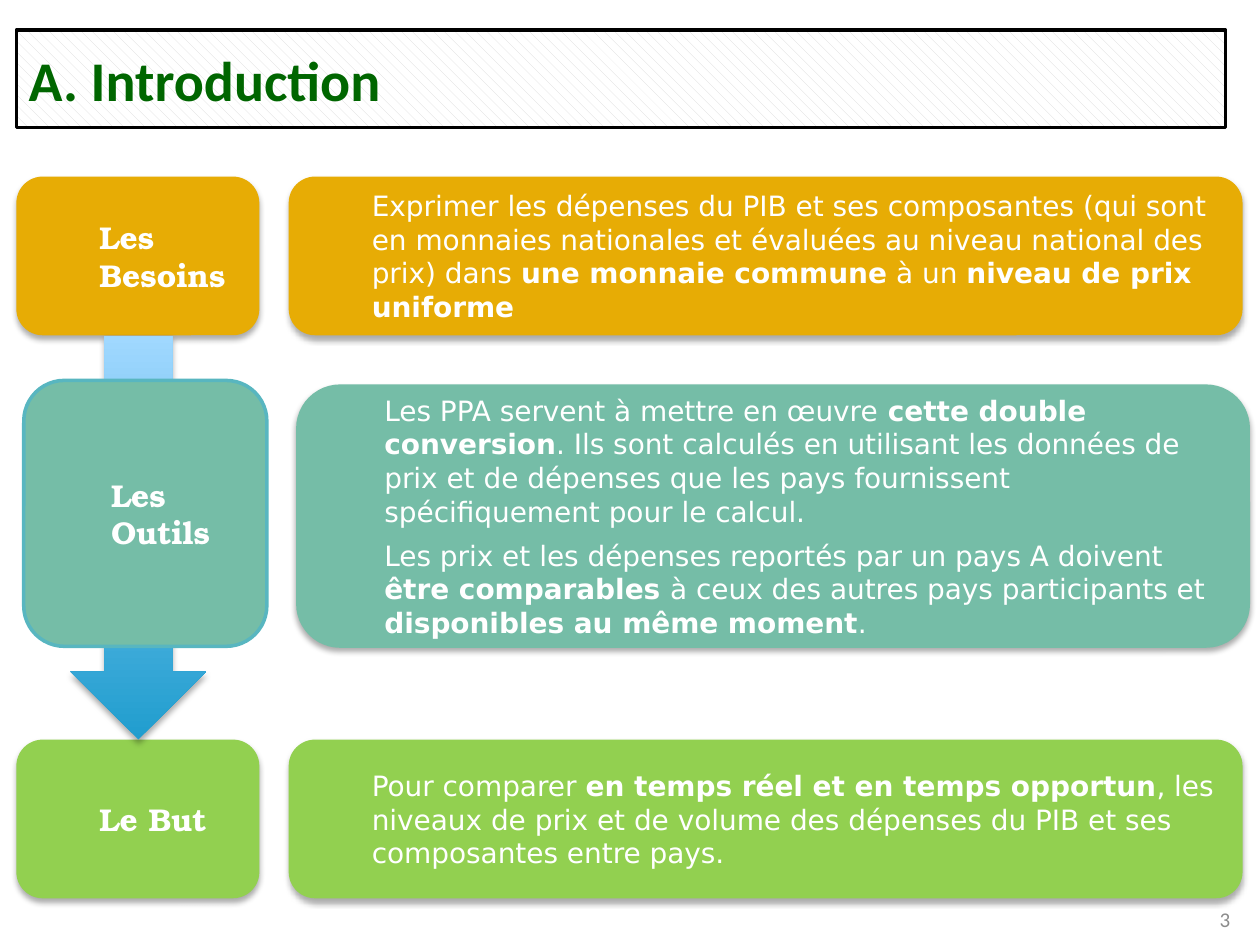
"""Build the introduction slide on needs, tools and goal."""
from dataclasses import dataclass

import pptx
import pptx.dml.color
import pptx.dml.fill
import pptx.enum.dml
import pptx.enum.shapes
import pptx.enum.text
import pptx.oxml
import pptx.oxml.ns
import pptx.util

Cm = pptx.util.Cm
Pt = pptx.util.Pt
Kind = pptx.enum.shapes.MSO_SHAPE
Align = pptx.enum.text.PP_ALIGN
COLORS = {
    "gold": "E7AC05", "lime": "92D050", "teal": "75BDA7", "rim": "58B6C0",
    "deep": "209DCE", "pale": "A0D8FF", "white": "FFFFFF", "black": "000000",
    "green": "006600", "gray": "8C8C8C", "hatch": "D9D9D9",
}
SHADOW = (
    f'<a:effectLst {pptx.oxml.ns.nsdecls("a")}>'
    f'<a:outerShdw blurRad="{Pt(3.5)}" dist="{Pt(2.2)}" dir="5400000" '
    'algn="ctr" rotWithShape="0"><a:srgbClr val="000000">'
    '<a:alpha val="32000"/></a:srgbClr></a:outerShdw></a:effectLst>'
)


@dataclass
class Box:
    """Place of a shape in centimetres."""
    left: float
    top: float
    width: float
    height: float

    def spot(self) -> tuple:
        """Return the place as lengths."""
        return Cm(self.left), Cm(self.top), Cm(self.width), Cm(self.height)


@dataclass
class Font:
    """Look of a text."""
    name: str
    size: int
    color: str


@dataclass
class Run:
    """Piece of text, bold or not."""
    text: str
    bold: bool = False


@dataclass
class Row:
    """Label card and the body card beside it."""
    color: str
    label: Box
    body: Box
    name: str
    paras: list[list[Run]]
    rim: str = ""


HEAD = Font("Calibri", 32, "green")
LABEL = Font("TeX Gyre Bonum", 18, "white")
BODY = Font("DejaVu Sans", 16, "white")
FOOT = Font("Calibri", 12, "gray")

NEEDS = Row("gold", Box(0.33, 3.56, 4.9, 3.2), Box(5.82, 3.56, 19.23, 3.2), "Les Besoins", [[
    Run("Exprimer les dépenses du PIB et ses composantes (qui sont en monnaies "
        "nationales et évaluées au niveau national des prix) dans "),
    Run("une monnaie commune", True),
    Run(" à un "),
    Run("niveau de prix uniforme", True),
]])
TOOLS = Row("teal", Box(0.48, 7.67, 4.9, 5.36), Box(5.97, 7.75, 19.23, 5.31), "Les Outils", [[
    Run("Les PPA servent à mettre en œuvre"),
    Run(" cette double conversion", True),
    Run(". Ils sont calculés en utilisant les données de prix et de dépenses "
        "que les pays fournissent spécifiquement pour le calcul."),
], [
    Run("Les prix et les dépenses reportés par un pays A doivent "),
    Run("être comparables ", True),
    Run("à ceux des autres pays participants et "),
    Run("disponibles au même moment", True),
    Run("."),
]], "rim")
GOAL = Row("lime", Box(0.33, 14.91, 4.9, 3.2), Box(5.82, 14.91, 19.23, 3.2), "Le But", [[
    Run("Pour comparer "),
    Run("en temps réel et en temps opportun", True),
    Run(", les niveaux de prix et de volume des dépenses du PIB et ses "
        "composantes entre pays."),
]])


def tint(key: str) -> pptx.dml.color.RGBColor:
    """Return a named colour."""
    return pptx.dml.color.RGBColor.from_string(COLORS[key])


def write(shape, paras: list[list[Run]], font: Font, align=Align.LEFT, inset: bool = False) -> None:
    """Write paragraphs run by run, centred in height."""
    frame = shape.text_frame
    frame.word_wrap = True
    frame.vertical_anchor = pptx.enum.text.MSO_ANCHOR.MIDDLE
    for i, runs in enumerate(paras):
        para = frame.add_paragraph() if i else frame.paragraphs[0]
        para.alignment = align
        if inset:
            para.level = 1
            para.space_after = Pt(6)
            props = para._p.get_or_add_pPr()
            props.set("marL", str(Cm(1.27)))
            props.set("indent", "0")
        for item in runs:
            run = para.add_run()
            run.text = item.text
            run.font.name = font.name
            run.font.size = Pt(font.size)
            run.font.bold = item.bold
            run.font.color.rgb = tint(font.color)


def draw(slide, kind, box: Box, rim: str = "", shade: bool = False):
    """Add a preset shape with a rim or a shadow."""
    shape = slide.shapes.add_shape(kind, *box.spot())
    if rim:
        shape.line.color.rgb = tint(rim)
        shape.line.width = Pt(2)
    else:
        shape.line.fill.background()
    if shade:
        shape._element.spPr.append(pptx.oxml.parse_xml(SHADOW))
    else:
        shape.shadow.inherit = False
    return shape


def card(slide, box: Box, color: str, paras: list[list[Run]], font: Font, rim: str = "") -> None:
    """Add a rounded card with inset text."""
    shape = draw(slide, Kind.ROUNDED_RECTANGLE, box, rim, not rim)
    shape.fill.solid()
    shape.fill.fore_color.rgb = tint(color)
    write(shape, paras, font, inset=True)


def band(slide, row: Row) -> None:
    """Add the two cards of a row."""
    card(slide, row.label, row.color, [[Run(row.name, True)]], LABEL, row.rim)
    card(slide, row.body, row.color, row.paras, BODY)


def arrow(slide) -> None:
    """Add the arrow from needs to goal."""
    shape = draw(slide, Kind.DOWN_ARROW, Box(1.42, 6.78, 2.74, 8.13), shade=True)
    shape.fill.gradient()
    shape.fill.gradient_angle = 90
    for stop, key in zip(shape.fill.gradient_stops, ("deep", "pale")):
        stop.color.rgb = tint(key)


def title(slide) -> None:
    """Add the hatched title bar."""
    shape = draw(slide, Kind.RECTANGLE, Box(0.33, 0.61, 24.38, 1.96), "black")
    shape.fill.patterned()
    shape.fill.pattern = pptx.enum.dml.MSO_PATTERN.DASHED_DOWNWARD_DIAGONAL
    shape.fill.fore_color.rgb = tint("hatch")
    shape.fill.back_color.rgb = tint("white")
    write(shape, [[Run("A. Introduction", True)]], HEAD)


def main() -> None:
    """Build and save the deck."""
    deck = pptx.Presentation()
    deck.slide_width, deck.slide_height = Cm(25.4), Cm(19.05)
    slide = deck.slides.add_slide(deck.slide_layouts[6])
    foot = slide.shapes.add_textbox(*Box(19.13, 18.21, 5.92, 0.64).spot())
    write(foot, [[Run("3")]], FOOT, Align.RIGHT)
    band(slide, NEEDS)
    band(slide, GOAL)
    arrow(slide)
    band(slide, TOOLS)
    title(slide)
    deck.save("out.pptx")


if __name__ == "__main__":
    main()
